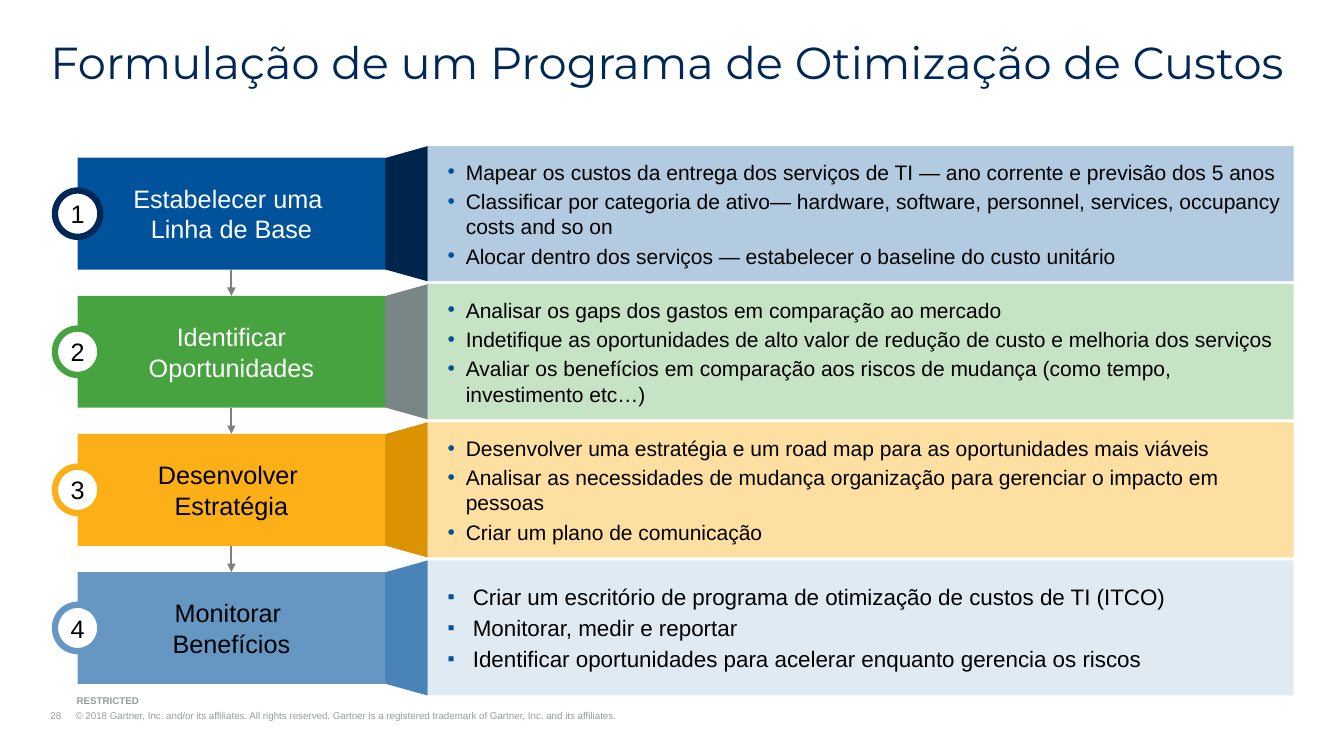
from lxml import etree
from pptx import Presentation
from pptx.dml.color import RGBColor
from pptx.enum.shapes import MSO_CONNECTOR, MSO_SHAPE
from pptx.enum.text import MSO_ANCHOR, PP_ALIGN
from pptx.oxml.ns import qn
from pptx.util import Inches, Pt

RECTANGLE, OVAL, TRAPEZOID = MSO_SHAPE.RECTANGLE, MSO_SHAPE.OVAL, MSO_SHAPE.TRAPEZOID
STRAIGHT = MSO_CONNECTOR.STRAIGHT
TOP, MIDDLE, BOTTOM = MSO_ANCHOR.TOP, MSO_ANCHOR.MIDDLE, MSO_ANCHOR.BOTTOM
LEFT, CENTER = PP_ALIGN.LEFT, PP_ALIGN.CENTER

WHITE = RGBColor(0xFF, 0xFF, 0xFF)
BLACK = RGBColor(0x00, 0x00, 0x00)
NAVY = RGBColor(0x00, 0x28, 0x56)
DARK_NAVY = RGBColor(0x00, 0x25, 0x4C)
BLUE = RGBColor(0x00, 0x52, 0x9B)
PALE_BLUE = RGBColor(0xB2, 0xCB, 0xE1)
GREEN = RGBColor(0x46, 0xA3, 0x3F)
PALE_GREEN = RGBColor(0xC7, 0xE3, 0xC5)
SLATE = RGBColor(0x7A, 0x86, 0x86)
AMBER = RGBColor(0xFC, 0xAF, 0x17)
DARK_AMBER = RGBColor(0xDB, 0x93, 0x03)
PALE_AMBER = RGBColor(0xFE, 0xDF, 0xA2)
STEEL = RGBColor(0x66, 0x97, 0xC3)
DARK_STEEL = RGBColor(0x49, 0x83, 0xB7)
PALE_STEEL = RGBColor(0xE0, 0xEA, 0xF3)
ARROW_GRAY = RGBColor(0x7F, 0x7F, 0x7F)
FOOTER_GRAY = RGBColor(0x97, 0x9D, 0x9D)

DOT = {"character": "•", "indent": 0.18, "percent": 100, "size": 15}
SQUARE = {"character": "▪", "indent": 0.25, "percent": 90, "size": 16}

STEPS = [
    {"label": ["Estabelecer uma ", "Linha de Base"], "text": WHITE, "fill": BLUE,
     "ring": NAVY, "fold": DARK_NAVY, "panel": PALE_BLUE, "bullet": DOT, "details": [
        "Mapear os custos da entrega dos serviços de TI — ano corrente e previsão dos 5 anos",
        "Classificar por categoria de ativo— hardware, software, personnel, services, "
        "occupancy costs and so on",
        "Alocar dentro dos serviços — estabelecer o baseline do custo unitário"]},
    {"label": ["Identificar", "Oportunidades"], "text": WHITE, "fill": GREEN,
     "ring": GREEN, "fold": SLATE, "panel": PALE_GREEN, "bullet": DOT, "details": [
        "Analisar os gaps dos gastos em comparação ao mercado",
        "Indetifique as oportunidades de alto valor de redução de custo e melhoria dos serviços",
        "Avaliar os benefícios em comparação aos riscos de mudança (como tempo, "
        "investimento etc…)"]},
    {"label": ["Desenvolver ", "Estratégia"], "text": BLACK, "fill": AMBER,
     "ring": AMBER, "fold": DARK_AMBER, "panel": PALE_AMBER, "bullet": DOT, "details": [
        "Desenvolver uma estratégia e um road map para as oportunidades mais viáveis",
        "Analisar as necessidades de mudança organização para gerenciar o impacto em pessoas",
        "Criar um plano de comunicação"]},
    {"label": ["Monitorar ", "Benefícios"], "text": BLACK, "fill": STEEL,
     "ring": STEEL, "fold": DARK_STEEL, "panel": PALE_STEEL, "bullet": SQUARE, "details": [
        "Criar um escritório de programa de otimização de custos de TI (ITCO)",
        "Monitorar, medir e reportar",
        "Identificar oportunidades para acelerar enquanto gerencia os riscos"]},
]
FIRST_TOP, PITCH = 1.45, 1.37
PANEL_LEFT, PANEL_WIDTH, PANEL_HEIGHT = 4.24, 8.59, 1.34
LABEL_LEFT, LABEL_WIDTH, LABEL_HEIGHT = 0.77, 3.05, 1.11
FOLD_WIDTH, RING_WIDTH, RING_HEIGHT = 0.42, 0.45, 0.46
LABEL_INSET = (PANEL_HEIGHT - LABEL_HEIGHT) / 2


class SlideBuilder:
    """Draws styled elements on the current slide."""

    def __init__(self, slide):
        self.slide = slide
        self.font_name = "Arial"

    def fill_text(self, shape, lines, font, frame=None, paragraph_format=None,
                  insets=(0, 0, 0, 0), bullet=None, tab=None):
        text_frame = shape.text_frame
        sides = ("margin_left", "margin_top", "margin_right", "margin_bottom")
        settings = {"word_wrap": True, "vertical_anchor": MIDDLE}
        settings.update(zip(sides, map(Inches, insets)))
        settings.update(frame or {})
        for name, value in settings.items():
            setattr(text_frame, name, value)
        for index, line in enumerate(lines):
            paragraph = text_frame.paragraphs[0] if index == 0 else text_frame.add_paragraph()
            paragraph.text = line
            for name, value in (paragraph_format or {}).items():
                setattr(paragraph, name, value)
            if bullet:
                self.add_bullet(paragraph, bullet)
                paragraph.space_before = Pt(3 if index else 0)
            if tab:
                self.add_tab(paragraph, tab)
            values = {"name": self.font_name, **font}
            paragraph.font.color.rgb = values.pop("color")
            for name, value in values.items():
                setattr(paragraph.font, name, value)

    def set_indent(self, paragraph, inches):
        properties = paragraph._p.get_or_add_pPr()
        properties.set("marL", str(Inches(inches)))
        properties.set("indent", str(-Inches(inches)))
        return properties

    def add_bullet(self, paragraph, bullet):
        properties = self.set_indent(paragraph, bullet["indent"])
        color = etree.SubElement(properties, qn("a:buClr"))
        etree.SubElement(color, qn("a:srgbClr"), val=str(BLUE))
        etree.SubElement(properties, qn("a:buSzPct"), val=str(bullet["percent"] * 1000))
        etree.SubElement(properties, qn("a:buFont"), typeface=self.font_name)
        etree.SubElement(properties, qn("a:buChar"), char=bullet["character"])

    def add_tab(self, paragraph, inches):
        properties = self.set_indent(paragraph, inches)
        tabs = etree.SubElement(properties, qn("a:tabLst"))
        etree.SubElement(tabs, qn("a:tab"), pos=str(Inches(inches)), algn="l")

    def text(self, box, lines, font, **options):
        shape = self.slide.shapes.add_textbox(*map(Inches, box))
        self.fill_text(shape, lines, font, **options)

    def shape(self, kind, box, fill, line=None):
        shape = self.slide.shapes.add_shape(kind, *map(Inches, box))
        shape.shadow.inherit = False
        shape.fill.solid()
        shape.fill.fore_color.rgb = fill
        if line:
            shape.line.color.rgb = line
            shape.line.width = Pt(4.5)
        else:
            shape.line.fill.background()
        return shape

    def arrow(self, x, top, bottom):
        connector = self.slide.shapes.add_connector(
            STRAIGHT, *map(Inches, (x, top, x, bottom)))
        connector.line.color.rgb = ARROW_GRAY
        connector.line.width = Pt(1.5)
        properties = connector._element.spPr
        etree.SubElement(properties.find(qn("a:ln")), qn("a:tailEnd"), type="triangle")
        etree.SubElement(properties, qn("a:effectLst"))

    def panel(self, top, step):
        box = (PANEL_LEFT, top, PANEL_WIDTH, PANEL_HEIGHT)
        self.fill_text(self.shape(RECTANGLE, box, step["panel"]), step["details"],
                       {"size": Pt(step["bullet"]["size"]), "color": BLACK},
                       paragraph_format={"alignment": LEFT},
                       insets=(0.2, 0.05, 0.1, 0.05), bullet=step["bullet"])

    def fold(self, top, color):
        left = PANEL_LEFT - (FOLD_WIDTH + PANEL_HEIGHT) / 2
        box = (left, top + (PANEL_HEIGHT - FOLD_WIDTH) / 2, PANEL_HEIGHT, FOLD_WIDTH)
        trapezoid = self.shape(TRAPEZOID, box, color)
        trapezoid.adjustments[0] = 0.28
        trapezoid.rotation = 270

    def label(self, top, step):
        box = (LABEL_LEFT, top + LABEL_INSET, LABEL_WIDTH, LABEL_HEIGHT)
        self.fill_text(self.shape(RECTANGLE, box, step["fill"]), step["label"],
                       {"size": Pt(18), "color": step["text"]}, frame={"word_wrap": False},
                       paragraph_format={"alignment": CENTER})

    def number(self, top, number, color):
        box = (LABEL_LEFT - RING_WIDTH / 2, top + (PANEL_HEIGHT - RING_HEIGHT) / 2,
               RING_WIDTH, RING_HEIGHT)
        self.fill_text(self.shape(OVAL, box, WHITE, color), [str(number)],
                       {"size": Pt(18), "color": BLACK}, frame={"word_wrap": False},
                       paragraph_format={"alignment": CENTER})


def main():
    presentation = Presentation()
    presentation.slide_width, presentation.slide_height = Inches(13.33), Inches(7.5)
    builder = SlideBuilder(presentation.slides.add_slide(presentation.slide_layouts[6]))
    footer = {"size": Pt(7), "color": FOOTER_GRAY}
    builder.text((0.5, 7.04, 7.99, 0.12),
                 ["28\t© 2018 Gartner, Inc. and/or its affiliates. All rights reserved. "
                  "Gartner is a registered trademark of Gartner, Inc. and its affiliates."],
                 footer, frame={"vertical_anchor": BOTTOM}, tab=0.25)
    builder.text((0.76, 6.89, 2.53, 0.12), ["RESTRICTED"], {**footer, "bold": True},
                 frame={"vertical_anchor": BOTTOM})
    builder.text((0.5, 0.4, 12.33, 0.48), ["Formulação de um Programa de Otimização de Custos"],
                 {"name": "Montserrat", "size": Pt(32), "color": NAVY},
                 frame={"vertical_anchor": TOP}, paragraph_format={"line_spacing": 0.9})
    for index, step in enumerate(STEPS):
        top = FIRST_TOP + index * PITCH
        builder.panel(top, step)
        builder.fold(top, step["fold"])
        if index:
            label_top = top + LABEL_INSET
            builder.arrow(LABEL_LEFT + LABEL_WIDTH / 2,
                          label_top - PITCH + LABEL_HEIGHT, label_top)
        builder.label(top, step)
        builder.number(top, index + 1, step["ring"])
    presentation.save("out.pptx")


if __name__ == "__main__":
    main()
